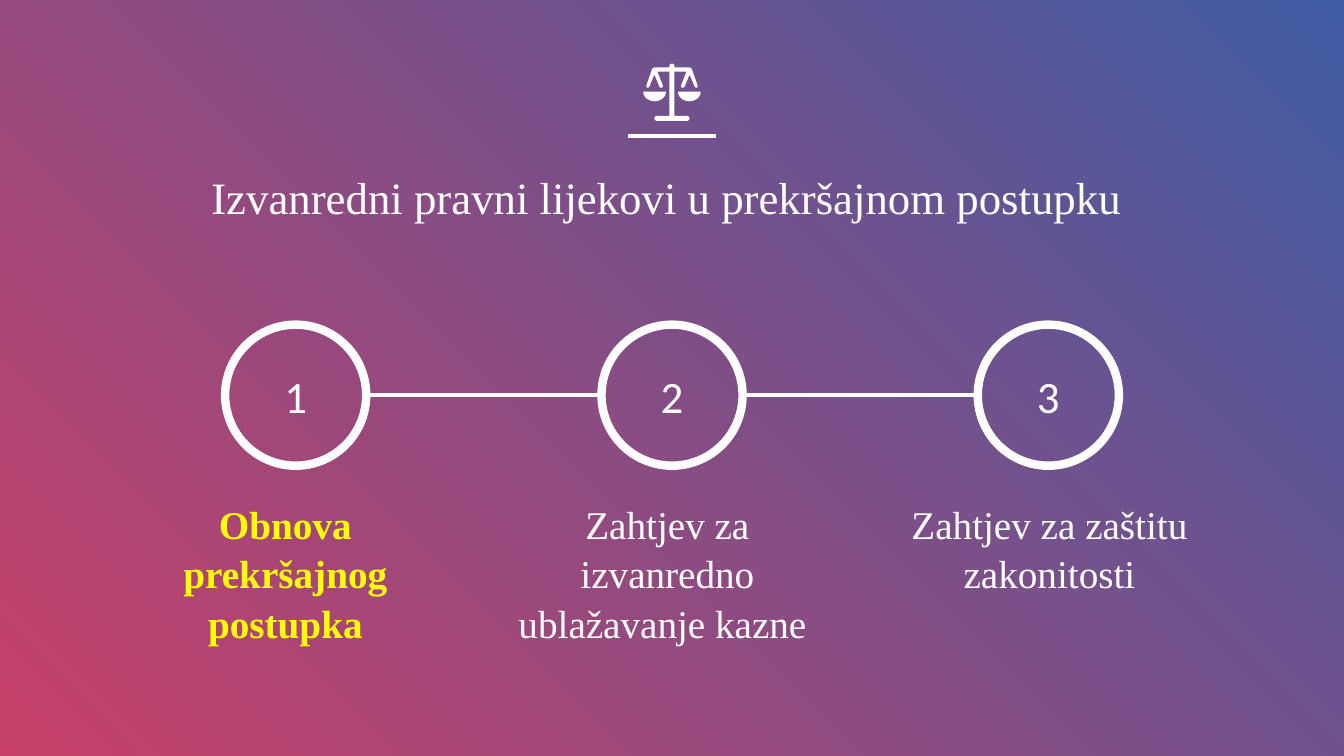
import math
from dataclasses import dataclass

import pptx
import pptx.dml.color
import pptx.enum.shapes
import pptx.enum.text
import pptx.oxml
import pptx.oxml.ns
import pptx.util

PP_ALIGN = pptx.enum.text.PP_ALIGN
ANCHOR = pptx.enum.text.MSO_ANCHOR
SHAPE = pptx.enum.shapes.MSO_SHAPE
CONNECTOR = pptx.enum.shapes.MSO_CONNECTOR
WIDTH = pptx.util.Inches(13.33)
HEIGHT = pptx.util.Inches(7.5)
WHITE = "FFFFFF"
SERIF = "Times New Roman"
FIRST_STEP, STEP_PITCH = 22, 28
FIRST_CAPTION, CAPTION_PITCH = 21.23, 28.43
STEP_Y = 52.27
DIAMETER = 10.5
ICON_UNIT = WIDTH / 1333
ICON_TOP = 63


@dataclass
class Step:
    caption: str
    color: str = WHITE
    bold: bool = False


@dataclass
class TextStyle:
    size: float
    font: str = SERIF
    color: str = WHITE
    bold: bool = False
    anchor: ANCHOR = ANCHOR.TOP
    inset: float = 0.13
    spacing: float = 1.0


STEPS = [
    Step("Obnova prekršajnog postupka", "FFFF00", True),
    Step("Zahtjev za izvanredno ublažavanje kazne "),
    Step("Zahtjev za zaštitu zakonitosti"),
]

HALF_FRAME = [
    (0, 0), (2, 1), (2.5, 2), (2.5, 4), (17.5, 4), (19.5, 5), (25.5, 22),
    (25, 24), (23.5, 24), (22.5, 23), (17.5, 11), (12.5, 23), (11.5, 24),
    (9.5, 24), (9, 22), (14.5, 8), (2.5, 8), (2.5, 52), (15.5, 52),
    (17, 53), (17.5, 54.5), (17, 56), (15.5, 57),
]


def x(share: float) -> int:
    return round(WIDTH * share / 100)


def y(share: float) -> int:
    return round(HEIGHT * share / 100)


def rgb(color: str) -> pptx.dml.color.RGBColor:
    return pptx.dml.color.RGBColor.from_string(color)


def write(sp, text: str, style: TextStyle) -> None:
    tf = sp.text_frame
    tf.word_wrap = True
    tf.vertical_anchor = style.anchor
    inset = pptx.util.Inches(style.inset)
    tf.margin_left = tf.margin_right = tf.margin_top = tf.margin_bottom = inset
    p = tf.paragraphs[0]
    p.alignment = PP_ALIGN.CENTER
    p.line_spacing = style.spacing
    r = p.add_run()
    r.text = text
    r.font.size = pptx.util.Pt(style.size)
    r.font.name = style.font
    r.font.bold = style.bold
    r.font.color.rgb = rgb(style.color)


def add_text(s, center: float, top: float, width: float, text: str, style: TextStyle) -> None:
    sp = s.shapes.add_textbox(x(center - width / 2), y(top), x(width), y(15.47))
    write(sp, text, style)


def add_line(s, start: float, end: float, height: float, kind: CONNECTOR) -> None:
    sp = s.shapes.add_connector(kind, x(start), y(height), x(end), y(height))
    sp.line.color.rgb = rgb(WHITE)
    sp.line.width = pptx.util.Pt(3)
    sp._element.spPr.append(pptx.oxml.parse_xml(f"<a:effectLst {pptx.oxml.ns.nsdecls('a')}/>"))


def add_background(s) -> None:
    sp = s.shapes.add_shape(SHAPE.RECTANGLE, 0, 0, WIDTH, HEIGHT)
    sp.shadow.inherit = False
    sp.line.fill.background()
    sp.fill.gradient()
    sp.fill.gradient_angle = 45
    for stop, color in zip(sp.fill.gradient_stops, ("B40036", "002685")):
        stop.color.rgb = rgb(color)
    for node in sp._element.spPr.iter(pptx.oxml.ns.qn("a:srgbClr")):
        node.append(pptx.oxml.parse_xml(f'<a:alpha {pptx.oxml.ns.nsdecls("a")} val="75000"/>'))


def add_outline(group, points: list[tuple[float, float]]) -> None:
    emu = [(x(50) + px * ICON_UNIT, (ICON_TOP + py) * ICON_UNIT) for px, py in points]
    builder = group.shapes.build_freeform(*emu[0], scale=1.0)
    builder.add_line_segments(emu[1:], close=True)
    sp = builder.convert_to_shape()
    sp.shadow.inherit = False
    sp.fill.solid()
    sp.fill.fore_color.rgb = rgb(WHITE)
    sp.line.fill.background()


def add_scales(s) -> None:
    group = s.shapes.add_group_shape()
    add_outline(group, HALF_FRAME + [(-px, py) for px, py in reversed(HALF_FRAME[1:])])
    angles = [math.radians(a) for a in range(0, 181, 10)]
    for center in (-17.25, 17.25):
        add_outline(group, [(center + 11.25 * math.cos(a), 28 + 9.5 * math.sin(a)) for a in angles])


def add_step(s, index: int, step: Step) -> None:
    center = FIRST_STEP + index * STEP_PITCH
    size = x(DIAMETER)
    sp = s.shapes.add_shape(
        SHAPE.OVAL, x(center) - size // 2, y(STEP_Y) - size // 2, size, size
    )
    sp.shadow.inherit = False
    sp.fill.background()
    sp.line.color.rgb = rgb(WHITE)
    sp.line.width = pptx.util.Pt(6)
    write(sp, str(index + 1), TextStyle(32, "Calibri", anchor=ANCHOR.MIDDLE))
    if index:
        radius = DIAMETER / 2
        add_line(s, center - STEP_PITCH + radius, center - radius, STEP_Y, CONNECTOR.ELBOW)
    style = TextStyle(28, color=step.color, bold=step.bold, spacing=1.05)
    add_text(s, FIRST_CAPTION + index * CAPTION_PITCH, 64.13, 26.25, step.caption, style)


def main() -> None:
    prs = pptx.Presentation()
    prs.slide_width, prs.slide_height = WIDTH, HEIGHT
    s = prs.slides.add_slide(prs.slide_layouts[6])
    add_background(s)
    add_line(s, 46.73, 53.27, 18, CONNECTOR.STRAIGHT)
    add_scales(s)
    for index, step in enumerate(STEPS):
        add_step(s, index, step)
    title = "Izvanredni pravni lijekovi u prekršajnom postupku"
    add_text(s, 49.61, 15.47, 70.73, title, TextStyle(32, anchor=ANCHOR.BOTTOM, inset=0.1))
    prs.save("out.pptx")


if __name__ == "__main__":
    main()
